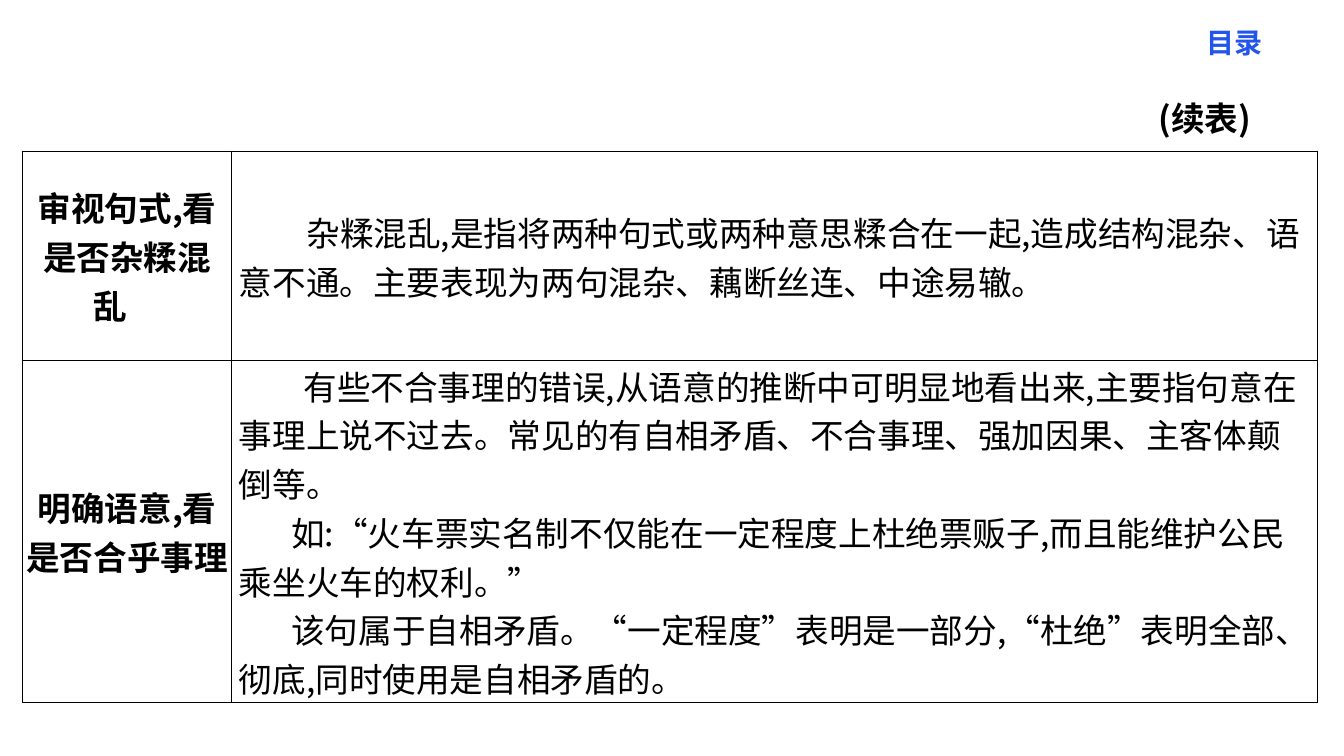
from lxml import etree
from pptx import Presentation, util as u
from pptx.dml.color import RGBColor
from pptx.enum import lang, text
from pptx.oxml.ns import qn

CJK = "Noto Sans CJK SC"
BLACK, BLUE = "000000", "2255EE"
WIDTH, HEIGHT = 13.33, 7.5
COLUMNS, ROWS = (2.08, 10.77), (2.08, 3.39)
TABLE_LEFT, TABLE_TOP = 0.22, 1.5
SIDE_MARGINS = (0.03, 0.07)

CONTENTS_LABEL = "目录"
CONTINUED = [("(", CJK), ("续表", "Calibri"), (")", CJK)]
# Each row: heading, then (first-line indent, paragraph) pairs
CHECKS = [
    ("审视句式,看是否杂糅混乱　", [
        (0.67, "杂糅混乱,是指将两种句式或两种意思糅合在一起,造成结构混杂、语意不通。"
               "主要表现为两句混杂、藕断丝连、中途易辙。"),
    ]),
    ("明确语意,看是否合乎事理", [
        (0.64, "有些不合事理的错误,从语意的推断中可明显地看出来,主要指句意在事理上说不过去。"
               "常见的有自相矛盾、不合事理、强加因果、主客体颠倒等。"),
        (0.52, "如:“火车票实名制不仅能在一定程度上杜绝票贩子,而且能维护公民乘坐火车的权利。”"),
        (0.52, "该句属于自相矛盾。“一定程度”表明是一部分,“杜绝”表明全部、彻底,"
               "同时使用是自相矛盾的。"),
    ]),
]


def add_run(paragraph, words, size=24, bold=False, color=BLACK, face=CJK):
    run = paragraph.add_run()
    run.text = words
    style = dict(size=u.Pt(size), bold=bold, name=face,
                 language_id=lang.MSO_LANGUAGE_ID.SIMPLIFIED_CHINESE)
    for key, value in style.items():
        setattr(run.font, key, value)
    run.font.color.rgb = RGBColor.from_string(color)
    east_asian = etree.Element(qn("a:ea"), typeface=CJK)
    run.font._element.find(qn("a:latin")).addnext(east_asian)


def indent_first_line(paragraph, inches):
    properties = paragraph._p.get_or_add_pPr()
    properties.set("marL", "0")
    properties.set("indent", str(u.Inches(inches)))


def add_label(slide, left, top, width, height):
    frame = slide.shapes.add_textbox(*map(u.Inches, (left, top, width, height))).text_frame
    frame.word_wrap = True
    return frame


def draw_borders(cell):
    properties = cell._tc.get_or_add_tcPr()
    for position, side in enumerate(("lnL", "lnR", "lnT", "lnB")):
        line = etree.Element(qn("a:" + side), w=str(u.Pt(1)))
        fill = etree.SubElement(line, qn("a:solidFill"))
        etree.SubElement(fill, qn("a:srgbClr"), val=BLACK)
        properties.insert(position, line)


def add_checks(slide):
    table = slide.shapes.add_table(
        len(ROWS), len(COLUMNS), u.Inches(TABLE_LEFT), u.Inches(TABLE_TOP),
        u.Inches(sum(COLUMNS)), u.Inches(sum(ROWS))).table
    table.first_row = table.horz_banding = False
    for column, width in zip(table.columns, COLUMNS):
        column.width = u.Inches(width)
    for row, height, (heading, details) in zip(table.rows, ROWS, CHECKS):
        row.height = u.Inches(height)
        for cell, margin in zip(row.cells, SIDE_MARGINS):
            layout = dict(margin_left=u.Inches(margin), margin_right=u.Inches(margin),
                          margin_top=0, margin_bottom=0,
                          vertical_anchor=text.MSO_ANCHOR.MIDDLE)
            for key, value in layout.items():
                setattr(cell, key, value)
            cell.fill.background()
            draw_borders(cell)
        heading_cell, detail_cell = row.cells
        title = heading_cell.text_frame.paragraphs[0]
        title.alignment = text.PP_ALIGN.CENTER
        add_run(title, heading, bold=True)
        frame = detail_cell.text_frame
        for number, (indent, words) in enumerate(details):
            paragraph = frame.add_paragraph() if number else frame.paragraphs[0]
            indent_first_line(paragraph, indent)
            add_run(paragraph, words)


def main():
    deck = Presentation()
    deck.slide_width, deck.slide_height = u.Inches(WIDTH), u.Inches(HEIGHT)
    slide = deck.slides.add_slide(deck.slide_layouts[6])

    contents = add_label(slide, 11.85, 0.2, 0.78, 0.44)
    for side in ("left", "right", "top", "bottom"):
        setattr(contents, "margin_" + side, 0)
    contents.vertical_anchor = text.MSO_ANCHOR.MIDDLE
    contents.paragraphs[0].alignment = text.PP_ALIGN.CENTER
    add_run(contents.paragraphs[0], CONTENTS_LABEL, size=20, bold=True, color=BLUE)

    add_checks(slide)

    continued = add_label(slide, 10.59, 0.92, 2.27, 0.35).paragraphs[0]
    indent_first_line(continued, 0.8)
    for words, face in CONTINUED:
        add_run(continued, words, bold=True, face=face)

    deck.save("out.pptx")


if __name__ == "__main__":
    main()
